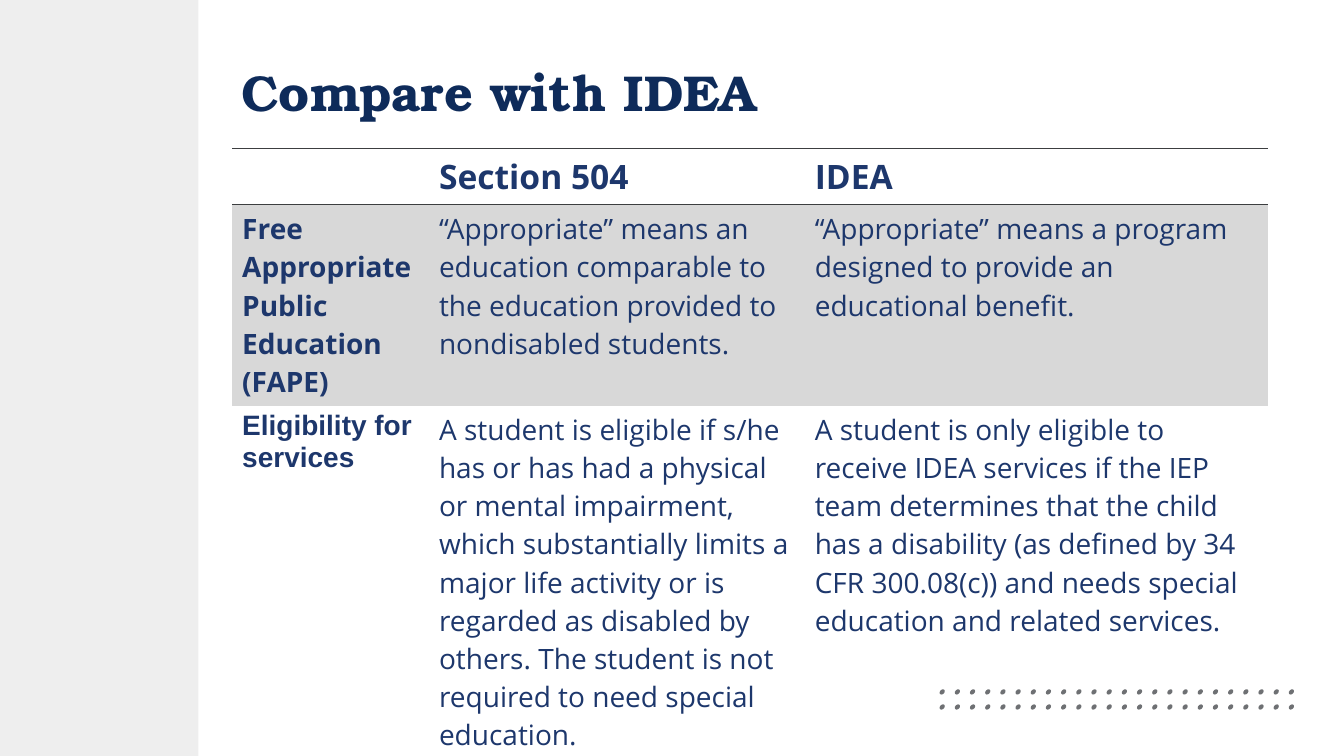
from dataclasses import dataclass

from lxml import etree
from pptx import Presentation
from pptx import util as u
from pptx.dml import color
from pptx.enum import shapes, text
from pptx.oxml import ns


@dataclass(frozen=True)
class Theme:
    head: str = "0E2B5A"
    body: str = "1D376C"
    rule: str = "3C3E40"
    band: str = "D8D8D8"
    side: str = "EEEEEE"
    dot: str = "6E7073"
    serif: str = "TeX Gyre Bonum"
    sans: str = "Open Sans"
    plain: str = "Arial"
    large: int = 36
    mid: int = 24
    small: int = 20


THEME = Theme()

ROWS = [
    ["", "Section 504", "IDEA"],
    [
        "Free Appropriate Public Education (FAPE)",
        "“Appropriate” means an education comparable to the education "
        "provided to nondisabled students.",
        "“Appropriate” means a program designed to provide an "
        "educational benefit.",
    ],
    [
        "Eligibility for services",
        "A student is eligible if s/he has or has had a physical or mental "
        "impairment, which substantially limits a major life activity or is "
        "regarded as disabled by others. The student is not required to need "
        "special education.",
        "A student is only eligible to receive IDEA services if the IEP team "
        "determines that the child has a disability (as defined by 34 CFR "
        "300.08(c)) and needs special education and related services.",
    ],
]
WIDTHS = [4.96, 9.47, 11.68]
HEIGHTS = [1.42, 5.06, 8.95]


def write(frame, words, size=THEME.small, font=THEME.sans,
          tint=THEME.body, bold=False):
    frame.word_wrap = True
    part = frame.paragraphs[0]
    part.font.size = u.Pt(size)
    part.font.name = font
    part.font.bold = bold
    part.font.color.rgb = color.RGBColor.from_string(tint)
    if words:
        run = part.add_run()
        run.text = words
        run.font.size = u.Pt(size)
        run.font.name = font
        run.font.bold = bold
        run.font.color.rgb = color.RGBColor.from_string(tint)


def draw(slide, kind, box, tint):
    """Add a flat shape with no outline."""
    shape = slide.shapes.add_shape(kind, *map(u.Cm, box))
    shape.shadow.inherit = False
    shape.fill.solid()
    shape.fill.fore_color.rgb = color.RGBColor.from_string(tint)
    shape.line.fill.background()
    return shape


def add_dots(slide, box, cols=24, rows=2):
    left, top, width, height = box
    wide, high = 0.15, 0.11
    for row in range(rows):
        for col in range(cols):
            x = left + col * (width - wide) / (cols - 1)
            y = top + row * (height - high) / (rows - 1)
            dot = draw(slide, shapes.MSO_SHAPE.OVAL, (x, y, wide, high),
                       THEME.dot)
            dot.rotation = 314.4


def add_title(slide, box, words):
    frame = slide.shapes.add_textbox(*map(u.Cm, box)).text_frame
    frame.vertical_anchor = text.MSO_ANCHOR.MIDDLE
    write(frame, words, size=THEME.large, font=THEME.serif,
          tint=THEME.head, bold=True)


def set_edges(cell, ruled):
    """Rule the named sides of a cell and clear the others."""
    props = cell._tc.get_or_add_tcPr()
    for spot, side in enumerate("LRTB"):
        edge = etree.Element(ns.qn("a:ln" + side), w=str(u.Pt(1)))
        if side in ruled:
            fill = etree.SubElement(edge, ns.qn("a:solidFill"))
            etree.SubElement(fill, ns.qn("a:srgbClr"), val=THEME.rule)
        else:
            etree.SubElement(edge, ns.qn("a:noFill"))
        props.insert(spot, edge)


def add_grid(slide, box):
    frame = slide.shapes.add_table(len(ROWS), len(WIDTHS), *map(u.Cm, box))
    table = frame.table
    table.first_row = table.horz_banding = False
    for col, width in zip(table.columns, WIDTHS):
        col.width = u.Cm(width)
    for row, height in zip(table.rows, HEIGHTS):
        row.height = u.Cm(height)
    edges = ["TB", "T", "B"]
    for r, line in enumerate(ROWS):
        for c, words in enumerate(line):
            cell = table.cell(r, c)
            if r == 1:
                cell.fill.solid()
                cell.fill.fore_color.rgb = color.RGBColor.from_string(
                    THEME.band)
            else:
                cell.fill.background()
            set_edges(cell, edges[r])
            write(cell.text_frame, words,
                  size=THEME.mid if r == 0 else THEME.small,
                  font=THEME.plain if (r, c) == (2, 0) else THEME.sans,
                  bold=r == 0 or c == 0)


def main():
    deck = Presentation()
    deck.slide_width, deck.slide_height = u.Cm(33.87), u.Cm(19.05)
    slide = deck.slides.add_slide(deck.slide_layouts[6])
    draw(slide, shapes.MSO_SHAPE.RECTANGLE, (0, 0, 5, 19.05), THEME.side)
    add_dots(slide, (23.67, 17.38, 8.95, 0.49))
    add_title(slide, (5.84, 0.64, 26.7, 3.33), "Compare with IDEA")
    add_grid(slide, (5.85, 3.74, sum(WIDTHS), sum(HEIGHTS)))
    deck.save("out.pptx")


if __name__ == "__main__":
    main()
